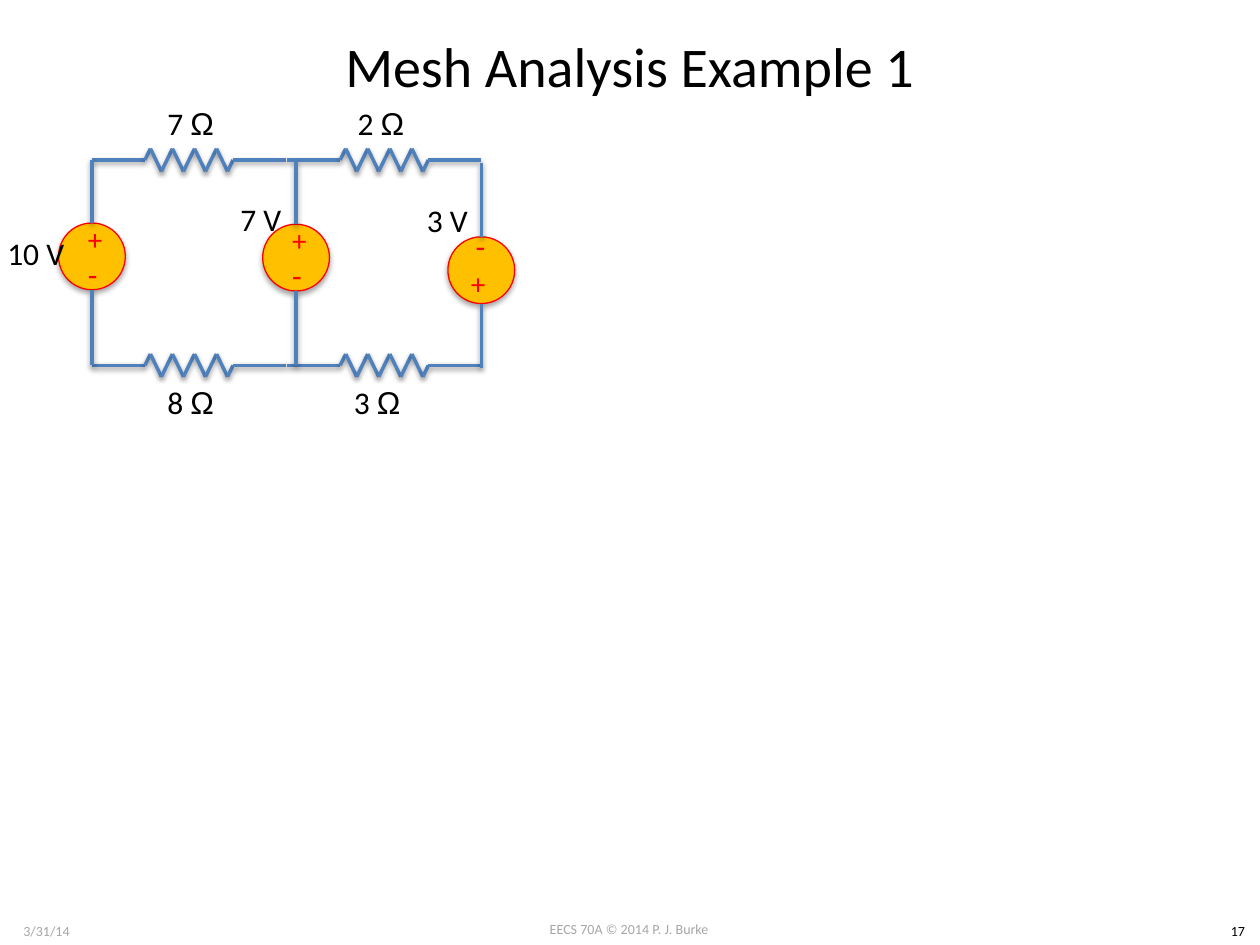
"""Build the mesh analysis slide with its two-loop circuit."""
from dataclasses import dataclass
from itertools import pairwise

from lxml.etree import SubElement
from pptx import Presentation
from pptx.dml.color import RGBColor
from pptx.enum.shapes import MSO_CONNECTOR, MSO_SHAPE
from pptx.enum.text import MSO_ANCHOR, MSO_AUTO_SIZE, PP_ALIGN
from pptx.oxml.ns import qn
from pptx.util import Inches, Pt


@dataclass(frozen=True)
class Theme:
    """Colours, fonts and type sizes of the slide."""
    ink: str = "000000"
    muted: str = "A6A6A6"
    wire: str = "4F81BD"
    source: str = "FFC000"
    polarity: str = "FF0000"
    font: str = "Calibri"
    symbol_font: str = "Arial"
    title: float = 32
    label: float = 18
    plus: float = 16.6
    footer: float = 8


def write(frame, text, *, size, color, font, symbol_font, align=PP_ALIGN.LEFT):
    """Write one paragraph, with any ohm sign in the symbol font."""
    para = frame.paragraphs[0]
    para.alignment = align
    value, ohm, _ = text.partition("Ω")
    for part, face in ((value, font), (ohm, symbol_font)):
        if part:
            span = para.add_run()
            span.text = part
            span.font.size = Pt(size)
            span.font.name = face
            span.font.color.rgb = RGBColor.from_string(color)


def add_shadow(element, alpha, distance):
    """Give a shape element a soft shadow that falls straight down."""
    effects = SubElement(element.spPr, qn("a:effectLst"))
    shadow = SubElement(effects, qn("a:outerShdw"), blurRad=str(Pt(3.1)),
                        dist=str(Pt(distance)), dir="5400000", rotWithShape="0")
    black = SubElement(shadow, qn("a:srgbClr"), val="000000")
    SubElement(black, qn("a:alpha"), val=str(alpha * 1000))


class CircuitSlide:
    """Hold the theme and the page, and draw each kind of element."""

    def __init__(self, page, theme):
        """Keep the page and its theme."""
        self.page = page
        self.theme = theme

    def text(self, text, left, top, width, height, *, size, color=None, parent=None,
             align=PP_ALIGN.CENTER, wrap=True, grow=False, middle=False, rotation=0):
        """Add a text box."""
        shapes = (parent or self.page).shapes
        box = shapes.add_textbox(Inches(left), Inches(top), Inches(width), Inches(height))
        box.rotation = rotation
        frame = box.text_frame
        frame.word_wrap = wrap
        frame.auto_size = MSO_AUTO_SIZE.SHAPE_TO_FIT_TEXT if grow else MSO_AUTO_SIZE.NONE
        frame.vertical_anchor = MSO_ANCHOR.MIDDLE if middle else MSO_ANCHOR.TOP
        write(frame, text, size=size, color=color or self.theme.ink, align=align,
              font=self.theme.font, symbol_font=self.theme.symbol_font)

    def label(self, text, left, top, width):
        """Add the value of a component."""
        self.text(text, left, top, width, 0.4, size=self.theme.label,
                  align=PP_ALIGN.LEFT, wrap=False, grow=True)

    def footer(self, text, left, top, width, color):
        """Add a small line at the foot of the page."""
        self.text(text, left, top, width, 0.24, size=self.theme.footer,
                  color=color, grow=True)

    def wire(self, parent, start, end):
        """Add a straight wire between two points."""
        line = parent.shapes.add_connector(
            MSO_CONNECTOR.STRAIGHT, *(Inches(value) for value in (*start, *end)))
        line.line.color.rgb = RGBColor.from_string(self.theme.wire)
        line.line.width = Pt(2)
        add_shadow(line._element, 38, 1.6)

    def resistor(self, left, middle):
        """Add a resistor with its leads, starting at the left end."""
        group = self.page.shapes.add_group_shape()
        body, span, teeth, swing, length = 0.42, 0.7, 8, 0.09, 1.54
        zigzag = [(body + span * (tooth + 0.5) / teeth, swing if tooth % 2 else -swing)
                  for tooth in range(teeth)]
        points = [(0, 0), (body, 0), *zigzag, (body + span, 0), (length, 0)]
        for start, end in pairwise((left + x, middle + y) for x, y in points):
            self.wire(group, start, end)

    def voltage_source(self, center, top, wire_top, wire_bottom, flipped=False):
        """Add a voltage source with its two wires."""
        group = self.page.shapes.add_group_shape()
        size, theme = 0.53, self.theme
        rotation = 180 if flipped else 0
        circle = group.shapes.add_shape(MSO_SHAPE.OVAL, Inches(center - size / 2),
                                        Inches(top), Inches(size), Inches(size))
        circle.fill.solid()
        circle.fill.fore_color.rgb = RGBColor.from_string(theme.source)
        circle.line.color.rgb = RGBColor.from_string(theme.polarity)
        circle.line.width = Pt(0.75)
        add_shadow(circle._element, 35, 1.8)
        upper, lower = top - 0.04, top + 0.24
        plus_top, minus_top = (lower, upper) if flipped else (upper, lower)
        for sign, sign_top, points in (("+", plus_top, theme.plus),
                                       ("-", minus_top, theme.label)):
            self.text(sign, center - 0.13, sign_top, 0.26, 0.33, size=points,
                      color=theme.polarity, parent=group, middle=True, rotation=rotation)
        self.wire(group, (center, wire_top), (center, top))
        self.wire(group, (center, top + size), (center, wire_bottom))


def main():
    """Build and save the deck."""
    deck = Presentation()
    deck.slide_width, deck.slide_height = Inches(10), Inches(7.5)
    theme = Theme()
    slide = CircuitSlide(deck.slides.add_slide(deck.slide_layouts[6]), theme)

    slide.footer("EECS 70A © 2014 P. J. Burke", 3.83, 7.26, 2.33, theme.muted)
    slide.footer("3/31/14", 0, 7.27, 0.74, theme.muted)
    slide.footer("17", 9.65, 7.27, 0.35, theme.ink)
    slide.text("Mesh Analysis Example 1", 0.5, -0.11, 9, 1.25,
               size=theme.title, middle=True)

    for rail in (1.27, 2.9):
        for left in (0.73, 2.28):
            slide.resistor(left, rail)

    slide.voltage_source(0.73, 1.77, 1.27, 2.9)
    slide.voltage_source(2.35, 1.78, 1.28, 2.9)
    slide.voltage_source(3.82, 1.88, 1.29, 2.92, flipped=True)

    for text, left, top, width in (
        ("7 Ω", 1.23, 0.78, 0.58),
        ("2 Ω", 2.74, 0.78, 0.58),
        ("8 Ω", 1.23, 2.99, 0.58),
        ("3 Ω", 2.71, 2.99, 0.58),
        ("10 V", -0.04, 1.81, 0.66),
        ("7 V", 1.81, 1.54, 0.53),
        ("3 V", 3.29, 1.55, 0.53),
    ):
        slide.label(text, left, top, width)

    deck.save("out.pptx")


if __name__ == "__main__":
    main()
